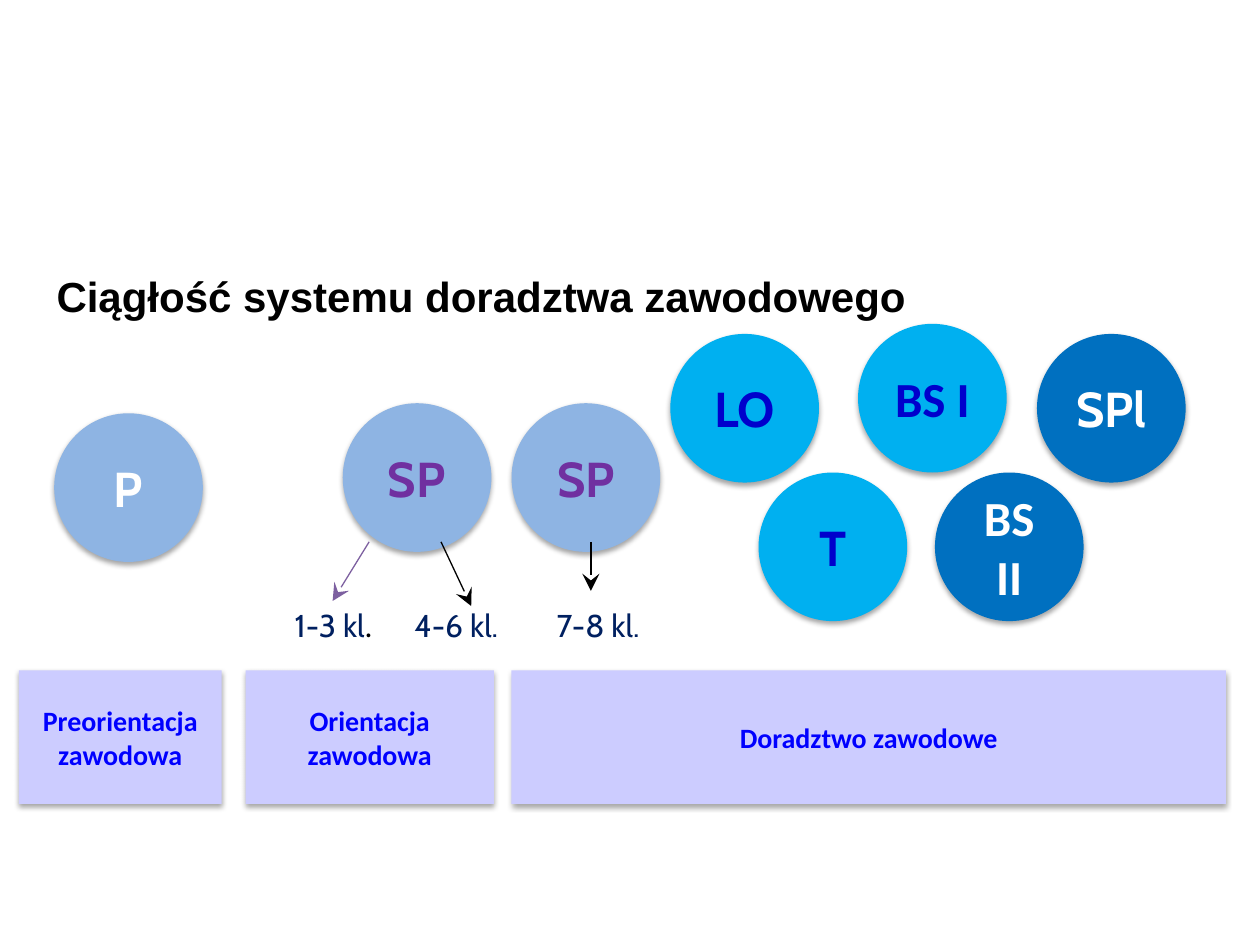
from dataclasses import dataclass
from typing import NamedTuple

from lxml import etree
from pptx import Presentation
from pptx.dml.color import RGBColor
from pptx.enum.shapes import MSO_CONNECTOR, MSO_SHAPE
from pptx.enum.text import MSO_ANCHOR, MSO_AUTO_SIZE, PP_ALIGN
from pptx.oxml.ns import qn
from pptx.util import Inches, Pt

OVAL, RECT = MSO_SHAPE.OVAL, MSO_SHAPE.RECTANGLE
STRAIGHT = MSO_CONNECTOR.STRAIGHT
MIDDLE, TOP = MSO_ANCHOR.MIDDLE, MSO_ANCHOR.TOP
CENTER, LEFT = PP_ALIGN.CENTER, PP_ALIGN.LEFT
GROW = MSO_AUTO_SIZE.SHAPE_TO_FIT_TEXT


@dataclass(frozen=True)
class Theme:
    pale: str = "8EB4E3"
    sky: str = "00B0F0"
    deep: str = "0070C0"
    lilac: str = "CCCCFF"
    white: str = "FFFFFF"
    black: str = "000000"
    purple: str = "7030A0"
    violet: str = "7D60A0"
    navy: str = "002060"
    ink: str = "0000CC"
    blue: str = "0000FF"
    school: str = "Cabin"
    body: str = "Calibri"
    heading: str = "Arial"
    school_size: int = 28
    title_size: int = 24
    class_size: int = 18
    stage_size: int = 16


T = Theme()
DIAMETER = 1.18
STAGE_TOP, STAGE_HEIGHT = 5.32, 1.06
CLASS_TOP, CLASS_HEIGHT = 4.76, 0.4


class Run(NamedTuple):
    text: str
    size: int
    font: str
    color: str
    bold: bool = True


class School(NamedTuple):
    x: float
    y: float
    fill: str
    color: str
    lines: tuple[str, ...]
    font: str = T.school


class Stage(NamedTuple):
    x: float
    width: float
    text: str


class ClassLabel(NamedTuple):
    x: float
    width: float
    runs: list[Run]


class Arrow(NamedTuple):
    x1: float
    y1: float
    x2: float
    y2: float
    color: str


SCHOOLS = [
    School(2.72, 3.2, T.pale, T.purple, ()),
    School(0.43, 3.28, T.pale, T.white, ("P",)),
    School(4.06, 3.2, T.pale, T.purple, ("SP",)),
    School(5.32, 2.65, T.sky, T.ink, ("LO",)),
    School(6.81, 2.57, T.sky, T.ink, ("BS I",), T.body),
    School(7.42, 3.75, T.deep, T.white, ("BS", "II"), T.body),
    School(6.02, 3.75, T.sky, T.ink, ("T",)),
    School(8.23, 2.65, T.deep, T.white, ("SPl",)),
]
STAGES = [
    Stage(0.15, 1.61, "Preorientacja zawodowa"),
    Stage(1.95, 1.97, "Orientacja zawodowa"),
    Stage(4.06, 5.67, "Doradztwo zawodowe"),
]


def class_run(text: str) -> Run:
    return Run(text, T.class_size, T.school, T.navy, False)


CLASS_LABELS = [
    ClassLabel(2.24, 0.95, [class_run("1-3 kl"),
                            Run(".", T.class_size, T.body, T.black, False)]),
    ClassLabel(3.19, 0.94, [class_run("4-6 kl.")]),
    ClassLabel(4.32, 1.0, [class_run("7-8 kl.")]),
]
ARROWS = [
    Arrow(2.93, 4.3, 2.64, 4.77, T.violet),
    Arrow(3.5, 4.3, 3.74, 4.81, T.black),
    Arrow(4.69, 4.3, 4.69, 4.69, T.black),
]


def rgb(color: str) -> RGBColor:
    return RGBColor.from_string(color)


def write(tf, lines: list[list[Run]], align=LEFT, anchor=TOP) -> None:
    tf.word_wrap = True
    tf.vertical_anchor = anchor
    for i, runs in enumerate(lines):
        p = tf.paragraphs[0] if i == 0 else tf.add_paragraph()
        p.alignment = align
        for run in runs:
            r = p.add_run()
            r.text = run.text
            r.font.size, r.font.name, r.font.bold = Pt(run.size), run.font, run.bold
            r.font.color.rgb = rgb(run.color)


def add_text(s, x: float, y: float, w: float, h: float, runs: list[Run]):
    tb = s.shapes.add_textbox(Inches(x), Inches(y), Inches(w), Inches(h))
    write(tb.text_frame, [runs])
    return tb


def add_shadow(sp) -> None:
    sp.shadow.inherit = False
    effects = sp._element.spPr.find(qn("a:effectLst"))
    shadow = etree.SubElement(effects, qn("a:outerShdw"), blurRad=str(Pt(3.1)),
                              dist=str(Pt(1.8)), dir="5400000", rotWithShape="0")
    color = etree.SubElement(shadow, qn("a:srgbClr"), val=T.black)
    etree.SubElement(color, qn("a:alpha"), val="35000")


def add_block(s, kind, x: float, y: float, w: float, h: float, fill: str,
              lines: list[list[Run]]) -> None:
    sp = s.shapes.add_shape(kind, Inches(x), Inches(y), Inches(w), Inches(h))
    sp.fill.solid()
    sp.fill.fore_color.rgb = rgb(fill)
    sp.line.fill.background()
    add_shadow(sp)
    write(sp.text_frame, lines, CENTER, MIDDLE)


def add_arrow(s, a: Arrow) -> None:
    line = s.shapes.add_connector(STRAIGHT, Inches(a.x1), Inches(a.y1),
                                  Inches(a.x2), Inches(a.y2))
    line.line.width = Pt(0.75)
    line.line.color.rgb = rgb(a.color)
    etree.SubElement(line.line._get_or_add_ln(), qn("a:tailEnd"),
                     type="stealth", w="lg", len="lg")
    etree.SubElement(line._element.spPr, qn("a:effectLst"))


def main() -> None:
    prs = Presentation()
    prs.slide_width, prs.slide_height = Inches(10), Inches(7.5)
    s = prs.slides.add_slide(prs.slide_layouts[6])

    # School types; the first circle is labelled by a text box
    for c in SCHOOLS:
        lines = [[Run(t, T.school_size, c.font, c.color)] for t in c.lines]
        add_block(s, OVAL, c.x, c.y, DIAMETER, DIAMETER, c.fill, lines)
    add_text(s, 2.98, 3.51, 0.93, 0.51,
             [Run("SP", T.school_size, T.school, T.purple)])

    # Guidance stages
    for st in STAGES:
        add_block(s, RECT, st.x, STAGE_TOP, st.width, STAGE_HEIGHT, T.lilac,
                  [[Run(st.text, T.stage_size, T.body, T.blue)]])

    # Class ranges and the arrows to them
    for label in CLASS_LABELS:
        add_text(s, label.x, CLASS_TOP, label.width, CLASS_HEIGHT, label.runs)
    for arrow in ARROWS:
        add_arrow(s, arrow)

    # Title
    title = add_text(s, 0.35, 2.1, 8.98, 0.5,
                     [Run("Ciągłość systemu doradztwa zawodowego",
                          T.title_size, T.heading, T.black)])
    title.text_frame.auto_size = GROW

    prs.save("out.pptx")


if __name__ == "__main__":
    main()
